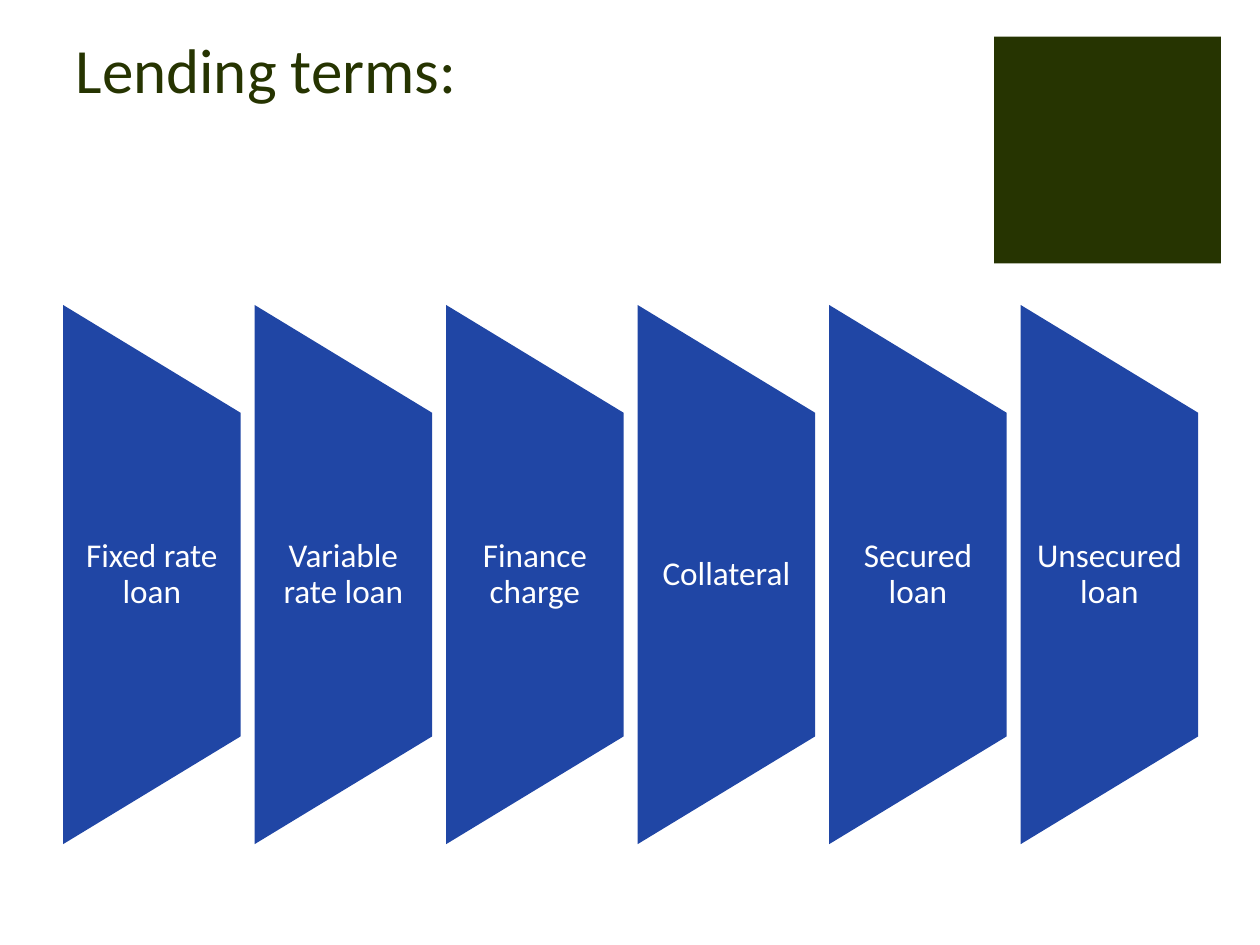
import pptx
import pptx.util
import pptx.dml.color
import pptx.enum.shapes
import pptx.enum.text

Inches = pptx.util.Inches
Pt = pptx.util.Pt
OLIVE = pptx.dml.color.RGBColor(0x26, 0x34, 0x01)
BLUE = pptx.dml.color.RGBColor(0x20, 0x46, 0xA5)
WHITE = pptx.dml.color.RGBColor(0xFF, 0xFF, 0xFF)
SHAPES = pptx.enum.shapes.MSO_SHAPE
ANCHORS = pptx.enum.text.MSO_ANCHOR
ALIGNMENTS = pptx.enum.text.PP_ALIGN


def add_filled_shape(page, kind, left, top, width, height, color):
    shape = page.shapes.add_shape(
        kind, Inches(left), Inches(top), Inches(width), Inches(height))
    shape.shadow.inherit = False
    shape.fill.solid()
    shape.fill.fore_color.rgb = color
    shape.line.fill.background()
    return shape


def add_span(para, text, size, color):
    span = para.add_run()
    span.text = text
    span.font.name = "Calibri"
    span.font.size = Pt(size)
    span.font.color.rgb = color


deck = pptx.Presentation()
deck.slide_width = Inches(10)
deck.slide_height = Inches(7.5)
page = deck.slides.add_slide(deck.slide_layouts[5])

add_filled_shape(page, SHAPES.RECTANGLE, 7.89, 0.29, 1.8, 1.8, OLIVE)

title = page.shapes.title
title.left, title.top = Inches(0.5), Inches(0.33)
title.width, title.height = Inches(7.12), Inches(0.56)
title.text_frame.vertical_anchor = ANCHORS.BOTTOM
title.text_frame.auto_size = pptx.enum.text.MSO_AUTO_SIZE.NONE
title_para = title.text_frame.paragraphs[0]
title_para.alignment = ALIGNMENTS.LEFT
add_span(title_para, "Lending terms:", 36, OLIVE)

terms = ["Fixed rate loan", "Variable rate loan", "Finance charge",
         "Collateral", "Secured loan", "Unsecured loan"]
first_left, pitch = 0.5, 1.52
panel_width, panel_height, panel_top = 1.41, 4.28, 2.42
label_height = 2.57
middle = panel_top + panel_height / 2

for index, term in enumerate(terms):
    left = first_left + index * pitch
    panel = add_filled_shape(
        page, SHAPES.FLOWCHART_MANUAL_OPERATION,
        left + (panel_width - panel_height) / 2, middle - panel_width / 2,
        panel_height, panel_width, BLUE)
    panel.rotation = 270

    box = page.shapes.add_textbox(
        Inches(left), Inches(middle - label_height / 2),
        Inches(panel_width), Inches(label_height))
    frame = box.text_frame
    frame.word_wrap = True
    frame.vertical_anchor = ANCHORS.MIDDLE
    frame.margin_left = frame.margin_right = Inches(0.13)
    frame.margin_top = frame.margin_bottom = Inches(0)
    para = frame.paragraphs[0]
    para.alignment = ALIGNMENTS.CENTER
    para.line_spacing = 0.9
    add_span(para, term, 19, WHITE)

deck.save("out.pptx")
